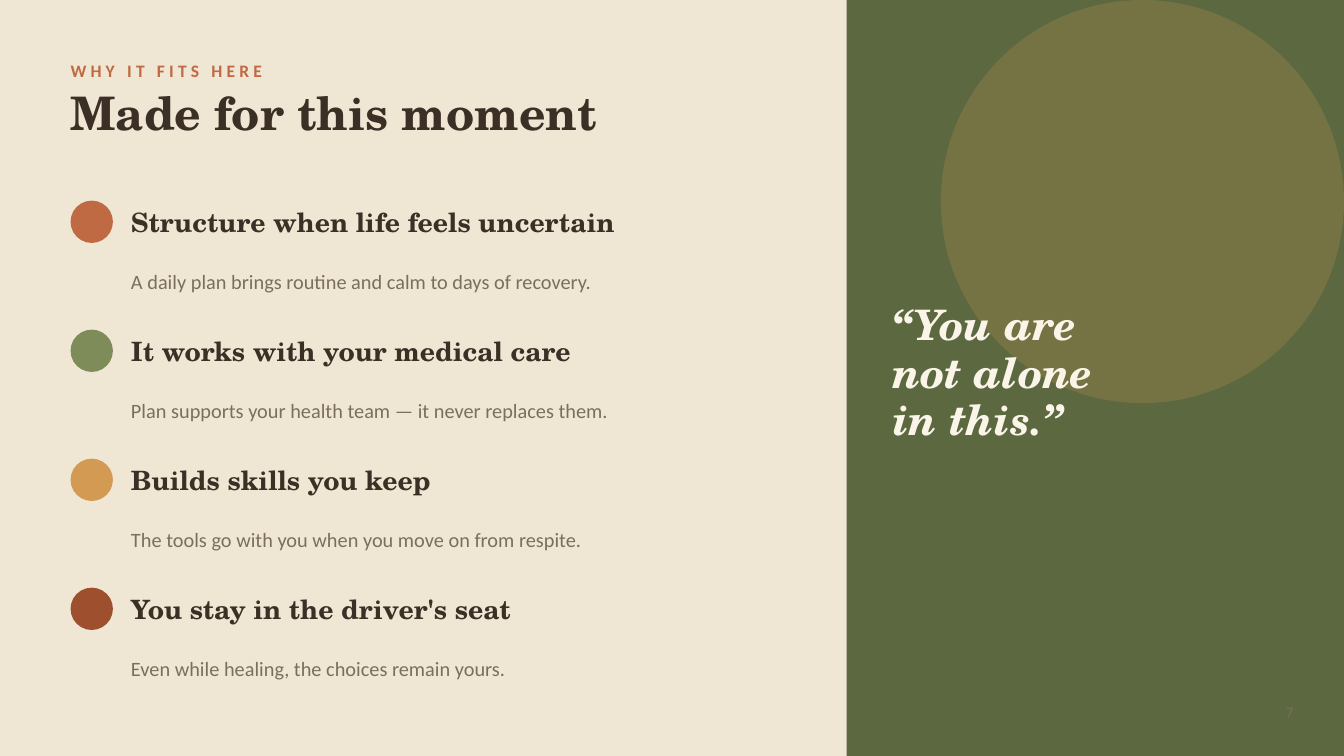
from dataclasses import dataclass

from lxml.etree import SubElement
from pptx import Presentation
from pptx.dml.color import RGBColor
from pptx.enum.shapes import MSO_SHAPE
from pptx.enum.text import MSO_ANCHOR, PP_ALIGN
from pptx.oxml.ns import qn
from pptx.util import Pt


@dataclass(frozen=True)
class Theme:
    """Colours, fonts and type sizes of the deck."""
    cream: str = "EFE6D3"
    olive: str = "5C6840"
    sage: str = "7E8C5A"
    ochre: str = "D29A52"
    clay: str = "C06A43"
    rust: str = "9E4F2E"
    ink: str = "3B2F26"
    muted: str = "7C6E5E"
    ivory: str = "FBF5E9"
    serif: str = "TeX Gyre Schola"
    sans: str = "Calibri"
    eyebrow_size: float = 12.5
    title_size: float = 33
    heading_size: float = 19
    detail_size: float = 14.5
    quote_size: float = 30
    number_size: float = 10.5


@dataclass(frozen=True)
class Box:
    """A rectangle in points."""
    left: float
    top: float
    width: float
    height: float

    def inner(self, dx, dy, width, height):
        """Return a box offset from this one's top left corner."""
        return Box(self.left + dx, self.top + dy, width, height)

    def lengths(self):
        """Return left, top, width and height as lengths."""
        return [Pt(v) for v in (self.left, self.top, self.width, self.height)]


THEME = Theme()
REASONS = [
    (THEME.clay, "Structure when life feels uncertain",
     "A daily plan brings routine and calm to days of recovery."),
    (THEME.sage, "It works with your medical care",
     "Plan supports your health team — it never replaces them."),
    (THEME.ochre, "Builds skills you keep",
     "The tools go with you when you move on from respite."),
    (THEME.rust, "You stay in the driver's seat",
     "Even while healing, the choices remain yours."),
]


def add_fill(slide, preset, box, color, opacity=100):
    """Draw a borderless shape in one colour."""
    shape = slide.shapes.add_shape(preset, *box.lengths())
    shape.shadow.inherit = False
    shape.fill.solid()
    shape.fill.fore_color.rgb = RGBColor.from_string(color)
    shape.line.fill.background()
    if opacity < 100:
        tint = shape.fill._xPr.find(f".//{qn('a:srgbClr')}")
        SubElement(tint, qn("a:alpha"), val=str(opacity * 1000))


def add_text(slide, box, lines, font, size, color, bold=False, italic=False,
             leading=None, tracking=0, anchor=MSO_ANCHOR.MIDDLE,
             align=PP_ALIGN.LEFT):
    """Place lines of text in a box without margins."""
    frame = slide.shapes.add_textbox(*box.lengths()).text_frame
    frame.word_wrap = True
    frame.vertical_anchor = anchor
    frame.margin_left = frame.margin_right = 0
    frame.margin_top = frame.margin_bottom = 0
    frame.text = "\n".join(lines)
    for paragraph in frame.paragraphs:
        paragraph.alignment = align
        if leading:
            paragraph.line_spacing = Pt(leading)
        paragraph.font.name = font
        paragraph.font.size = Pt(size)
        paragraph.font.bold = bold
        paragraph.font.italic = italic
        paragraph.font.color.rgb = RGBColor.from_string(color)
        if tracking:
            for run in paragraph.runs:
                run._r.get_or_add_rPr().set("spc", str(tracking * 100))


def add_header(slide, box):
    """Place the eyebrow line and the title."""
    add_text(slide, box.inner(0, 0, box.width, 28.8), ["WHY IT FITS HERE"],
             THEME.sans, THEME.eyebrow_size, THEME.clay, bold=True, tracking=3)
    add_text(slide, box.inner(0, 24.48, box.width, 72),
             ["Made for this moment"], THEME.serif, THEME.title_size,
             THEME.ink, bold=True, anchor=MSO_ANCHOR.TOP)


def add_reasons(slide, box):
    """Stack the reasons in equal rows, each with a coloured dot."""
    pitch = box.height / len(REASONS)
    indent = 43.2
    text_width = box.width - indent
    for index, (color, heading, detail) in enumerate(REASONS):
        row = box.inner(0, index * pitch, box.width, pitch)
        add_fill(slide, MSO_SHAPE.OVAL, row.inner(0, 2.88, 30.24, 30.24), color)
        add_text(slide, row.inner(indent, 0, text_width, 36), [heading],
                 THEME.serif, THEME.heading_size, THEME.ink, bold=True)
        add_text(slide, row.inner(indent, 37.44, text_width, 43.2), [detail],
                 THEME.sans, THEME.detail_size, THEME.muted, leading=20)


def add_quote_panel(slide, box):
    """Fill the side panel with its circle, quote and page number."""
    circle = 288
    add_fill(slide, MSO_SHAPE.RECTANGLE, box, THEME.olive)
    add_fill(slide, MSO_SHAPE.OVAL,
             box.inner(box.width - circle, 0, circle, circle),
             THEME.ochre, opacity=22)
    add_text(slide, box.inner(32.4, 172.8, 288, 187.2),
             ["“You are", "not alone", "in this.”"], THEME.serif,
             THEME.quote_size, THEME.ivory, bold=True, italic=True, leading=34)
    add_text(slide, box.inner(box.width - 76, box.height - 42, 40, 20), ["7"],
             THEME.sans, THEME.number_size, THEME.muted, align=PP_ALIGN.RIGHT)


def main():
    """Build and save the slide."""
    deck = Presentation()
    deck.slide_width, deck.slide_height = Pt(960), Pt(540)
    slide = deck.slides.add_slide(deck.slide_layouts[6])
    slide.background.fill.solid()
    slide.background.fill.fore_color.rgb = RGBColor.from_string(THEME.cream)
    add_quote_panel(slide, Box(604.8, 0, 355.2, 540))
    add_header(slide, Box(50.4, 36, 532.8, 96.48))
    add_reasons(slide, Box(50.4, 140.4, 540, 368.64))
    deck.save("out.pptx")


if __name__ == "__main__":
    main()
